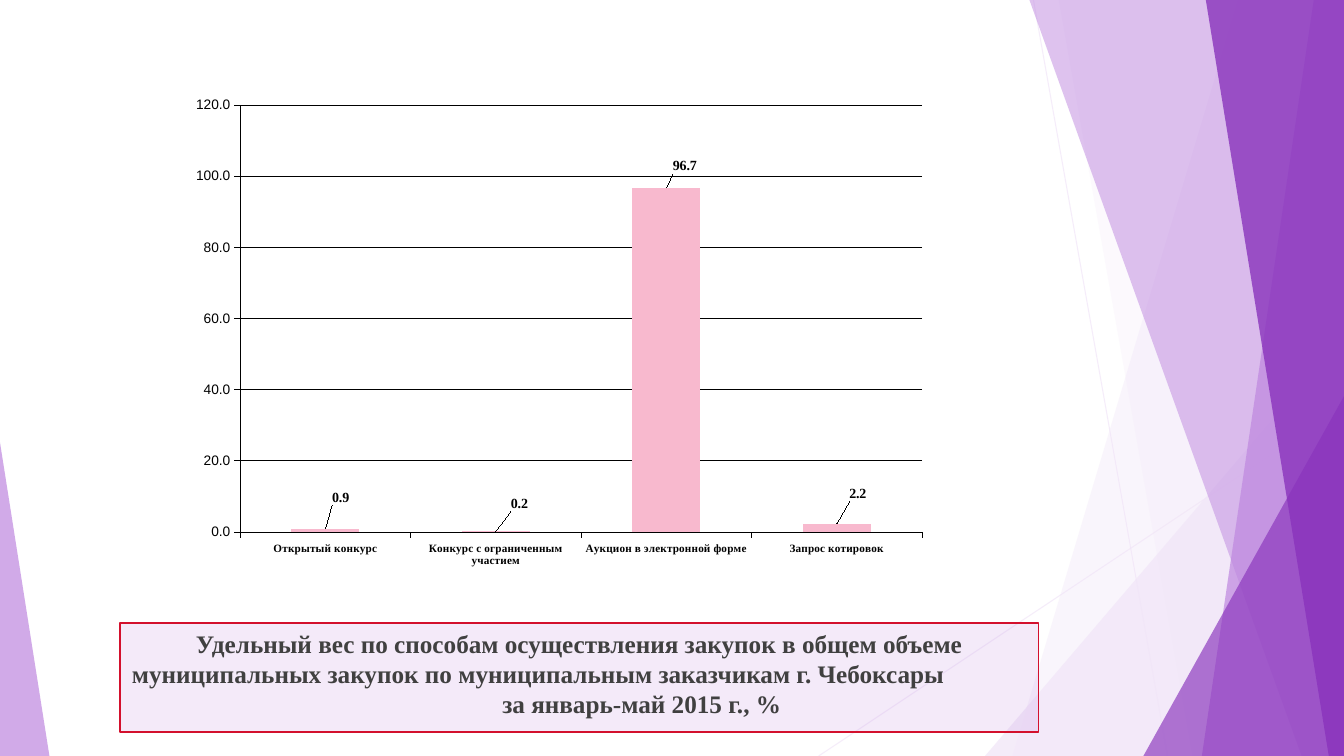
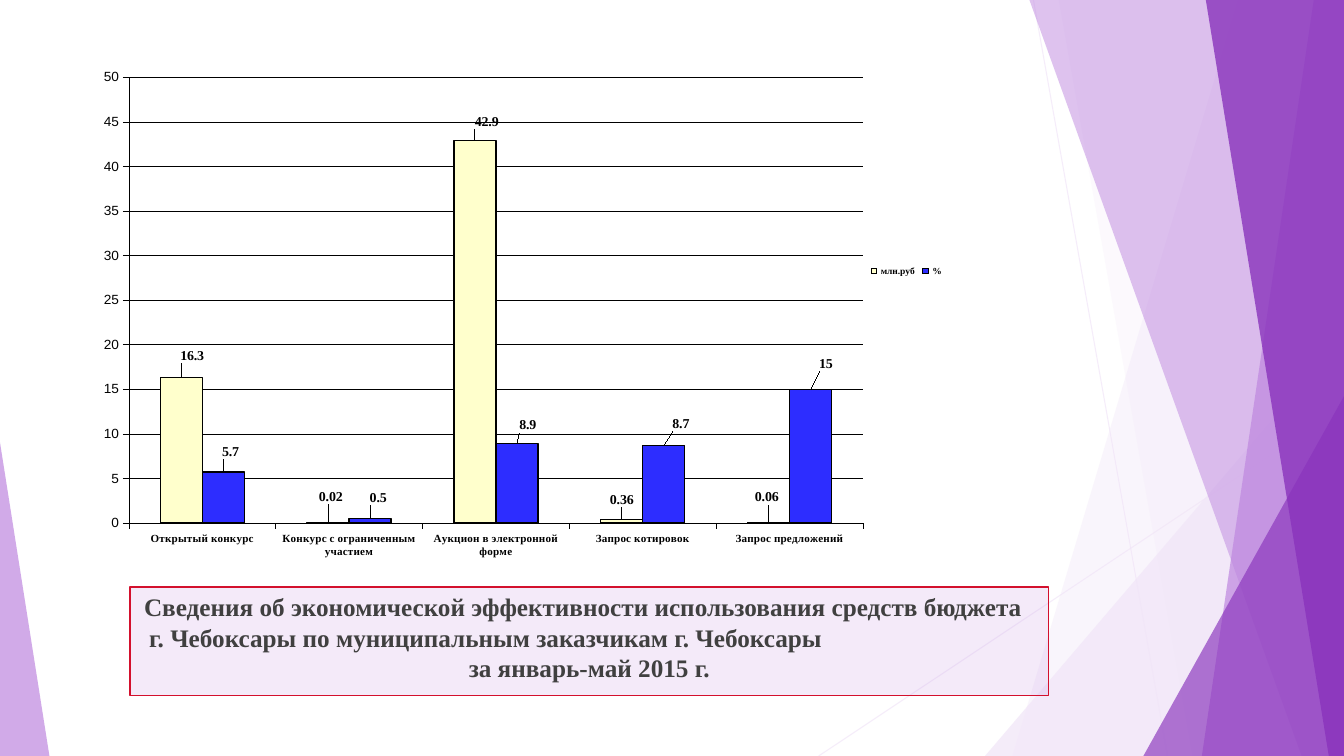
from dataclasses import dataclass

from lxml.etree import SubElement
from pptx import Presentation
from pptx.chart.data import CategoryChartData
from pptx.dml.color import RGBColor
from pptx.enum.chart import XL_CHART_TYPE as ChartType
from pptx.enum.chart import XL_LABEL_POSITION as LabelPosition
from pptx.enum.chart import XL_LEGEND_POSITION as LegendPosition
from pptx.enum.chart import XL_TICK_LABEL_POSITION as TickLabels
from pptx.enum.chart import XL_TICK_MARK as TickMark
from pptx.enum.shapes import MSO_CONNECTOR as Connector
from pptx.enum.shapes import MSO_SHAPE as Shape
from pptx.enum.text import MSO_ANCHOR as Anchor
from pptx.enum.text import PP_ALIGN as Align
from pptx.oxml import parse_xml
from pptx.oxml.ns import nsdecls, qn
from pptx.util import Pt

# Shared style: 100 px to the inch
PX = 9144
WIDTH, HEIGHT = 1333, 750
PALE, LILAC, VIOLET = "F1E5F8", "BE87DF", "8933BC"
RED, GREY, BLACK = "D3102D", "404040", "000000"
SANS, SERIF = "Arial", "Times New Roman"


@dataclass(frozen=True)
class Box:
    left: int
    top: int
    width: int
    height: int

    def emu(self) -> tuple:
        return tuple(value * PX for value in (self.left, self.top, self.width, self.height))


@dataclass(frozen=True)
class Band:
    """Area right of a slanted edge running from the top to the bottom of the slide."""
    top_x: int
    bottom_x: int
    color: str
    opacity: int


@dataclass(frozen=True)
class Triangle:
    box: Box
    apex: int
    color: str
    opacity: int


@dataclass(frozen=True)
class Line:
    text: str
    align: Align = Align.CENTER
    indent: int = 0


@dataclass(frozen=True)
class Series:
    name: str
    values: tuple
    color: str
    label_shifts: tuple
    outline: bool = False


@dataclass(frozen=True)
class ChartSlide:
    caption_box: Box
    caption: tuple
    chart_box: Box
    plot_area: tuple
    categories: tuple
    series: tuple
    maximum: int
    step: int
    number_format: str
    legend_area: tuple = ()


RAYS = ((1025, 0, 1158, 750), (1333, 403, 812, 750))
BACKDROP = (
    Band(1228, 1004, PALE, 36),
    Band(1050, 1183, PALE, 20),
    Triangle(Box(977, 333, 356, 417), 1, PALE, 72),
    Band(1021, 1291, LILAC, 50),
    Band(1303, 1192, LILAC, 70),
    Band(1196, 1318, VIOLET, 80),
    Triangle(Box(1134, 393, 199, 357), 1, VIOLET, 66),
    Triangle(Box(0, 439, 49, 311), 0, LILAC, 70),
)

METHODS = ("Открытый конкурс", "Конкурс с ограниченным участием",
           "Аукцион в электронной форме", "Запрос котировок")
SLIDES = (
    ChartSlide(
        caption_box=Box(119, 618, 911, 108),
        caption=(
            Line("Удельный вес по способам осуществления закупок в общем объеме"),
            Line("муниципальных закупок по муниципальным заказчикам г. Чебоксары", Align.LEFT, 2),
            Line("за январь-май 2015 г., %", indent=124),
        ),
        chart_box=Box(168, 19, 836, 584),
        plot_area=(0.084, 0.146, 0.809, 0.725),
        categories=METHODS,
        series=(
            Series("Series 1", (0.9, 0.2, 96.7, 2.2), "F8B9CE",
                   ((15, -19), (23, -16), (18, -10), (21, -18))),
        ),
        maximum=120, step=20, number_format="0.0",
    ),
    ChartSlide(
        caption_box=Box(129, 582, 911, 108),
        caption=(
            Line("Сведения об экономической эффективности использования средств бюджета",
                 Align.LEFT, 4),
            Line("г. Чебоксары по муниципальным заказчикам г. Чебоксары", Align.LEFT, 9),
            Line("за январь-май 2015 г."),
        ),
        chart_box=Box(103, 57, 904, 496),
        plot_area=(0.022, 0.041, 0.81, 0.918),
        categories=METHODS + ("Запрос предложений",),
        series=(
            Series("млн.руб", (16.3, 0.02, 42.9, 0.36, 0.06), "FFFFCC",
                   ((11, -11), (3, -15), (12, -7), (0, -9), (-2, -14)), True),
            Series("%", (5.7, 0.5, 8.9, 8.7, 15), "2D2DFF",
                   ((7, -9), (8, -9), (11, -7), (17, -10), (15, -14)), True),
        ),
        maximum=50, step=5, number_format="General",
        legend_area=(0.835, 0.42, 0.09, 0.04),
    ),
)


# Formatting helpers
def rgb(color: str) -> RGBColor:
    return RGBColor.from_string(color)


def set_opacity(element, percent: int) -> None:
    for color in element.xpath("./p:spPr//a:srgbClr"):
        SubElement(color, qn("a:alpha")).set("val", str(percent * 1000))


def fill_shape(shape, color: str, opacity: int) -> None:
    shape.fill.solid()
    shape.fill.fore_color.rgb = rgb(color)
    set_opacity(shape._element, opacity)


def set_font(font, size: float, name: str = SERIF, bold: bool = True, color: str = BLACK) -> None:
    font.size, font.name, font.bold = Pt(size), name, bold
    font.color.rgb = rgb(color)


def set_line(line, width: float, color: str = BLACK) -> None:
    line.color.rgb = rgb(color)
    line.width = Pt(width)


def set_layout(parent, index: int, **entries) -> None:
    """Give a chart part a manual layout, placed at the given child index."""
    for old in parent.findall(qn("c:layout")):
        parent.remove(old)
    inner = "".join(f'<c:{tag} val="{value}"/>' for tag, value in entries.items())
    parent.insert(index, parse_xml(
        f'<c:layout {nsdecls("c")}><c:manualLayout>{inner}</c:manualLayout></c:layout>'))


def edge_layout(area: tuple) -> dict:
    return dict(xMode="edge", yMode="edge", **dict(zip("xywh", area)))


# Backdrop
def add_ray(slide, ray: tuple) -> None:
    connector = slide.shapes.add_connector(Connector.STRAIGHT, *(value * PX for value in ray))
    set_line(connector.line, 0.75, PALE)
    set_opacity(connector._element, 70)
    SubElement(connector._element.spPr, qn("a:effectLst"))


def add_backdrop_part(slide, part) -> None:
    if isinstance(part, Band):
        builder = slide.shapes.build_freeform(part.top_x, 0, scale=PX)
        builder.add_line_segments(((WIDTH, 0), (WIDTH, HEIGHT), (part.bottom_x, HEIGHT)))
        shape = builder.convert_to_shape()
    else:
        shape = slide.shapes.add_shape(Shape.ISOSCELES_TRIANGLE, *part.box.emu())
        shape.adjustments[0] = part.apex
    shape.shadow.inherit = False
    shape.line.fill.background()
    fill_shape(shape, part.color, part.opacity)


# Caption
def add_text(paragraph, text: str, *, size: float, color: str, align: Align, indent: int) -> None:
    paragraph.alignment = align
    if indent:
        paragraph._p.get_or_add_pPr().set("marL", str(indent * PX))
    run = paragraph.add_run()
    run.text = text
    set_font(run.font, size, color=color)


def add_caption(slide, box: Box, lines: tuple) -> None:
    shape = slide.shapes.add_textbox(*box.emu())
    fill_shape(shape, LILAC, 17)
    set_line(shape.line, 1.25, RED)
    frame = shape.text_frame
    frame.word_wrap = True
    frame.vertical_anchor = Anchor.TOP
    for number, line in enumerate(lines):
        paragraph = frame.add_paragraph() if number else frame.paragraphs[0]
        add_text(paragraph, line.text, size=18, color=GREY, align=line.align, indent=line.indent)


# Chart
def format_axes(chart, content: ChartSlide) -> None:
    category, value = chart.category_axis, chart.value_axis
    for axis in (category, value):
        axis.major_tick_mark, axis.minor_tick_mark = TickMark.OUTSIDE, TickMark.NONE
        set_line(axis.format.line, 0.25)
    category.tick_label_position = TickLabels.LOW
    set_font(category.tick_labels.font, 8)
    value.minimum_scale, value.maximum_scale = 0, content.maximum
    value.major_unit = content.step
    value.has_major_gridlines = True
    set_line(value.major_gridlines.format.line, 0.25)
    set_font(value.tick_labels.font, 9.8, SANS, bold=False)
    value.tick_labels.number_format = content.number_format
    value.tick_labels.number_format_is_linked = False


def format_series(plotted, series: Series, box: Box) -> None:
    plotted.format.fill.solid()
    plotted.format.fill.fore_color.rgb = rgb(series.color)
    plotted.invert_if_negative = False
    if series.outline:
        set_line(plotted.format.line, 1)
    for index, (shift_x, shift_y) in enumerate(series.label_shifts):
        label = plotted.points[index].data_label
        set_font(label.font, 10)
        label.position = LabelPosition.OUTSIDE_END
        element = plotted._element.xpath(f"./c:dLbls/c:dLbl[c:idx/@val='{index}']")[0]
        set_layout(element, 1, x=round(shift_x / box.width, 3), y=round(shift_y / box.height, 3))


def add_column_chart(slide, content: ChartSlide) -> None:
    data = CategoryChartData(number_format=content.number_format)
    data.categories = content.categories
    for series in content.series:
        data.add_series(series.name, series.values)
    chart = slide.shapes.add_chart(
        ChartType.COLUMN_CLUSTERED, *content.chart_box.emu(), data).chart
    set_font(chart.font, 9.8, SANS, bold=False)
    chart.has_title = False
    plot = chart.plots[0]
    plot.gap_width, plot.overlap, plot.vary_by_categories = 150, 0, False
    format_axes(chart, content)
    for plotted, series in zip(plot.series, content.series):
        format_series(plotted, series, content.chart_box)
    plot_area = chart._chartSpace.chart.plotArea
    set_layout(plot_area, 0, layoutTarget="inner", **edge_layout(content.plot_area))
    chart.has_legend = bool(content.legend_area)
    if content.legend_area:
        legend = chart.legend
        legend.position = LegendPosition.RIGHT
        legend.include_in_layout = False
        set_font(legend.font, 6.8)
        set_layout(legend._element, 1, **edge_layout(content.legend_area))


def main() -> None:
    presentation = Presentation()
    presentation.slide_width, presentation.slide_height = WIDTH * PX, HEIGHT * PX
    for content in SLIDES:
        slide = presentation.slides.add_slide(presentation.slide_layouts[6])
        for ray in RAYS:
            add_ray(slide, ray)
        for part in BACKDROP:
            add_backdrop_part(slide, part)
        add_caption(slide, content.caption_box, content.caption)
        add_column_chart(slide, content)
    presentation.save("out.pptx")


if __name__ == "__main__":
    main()
